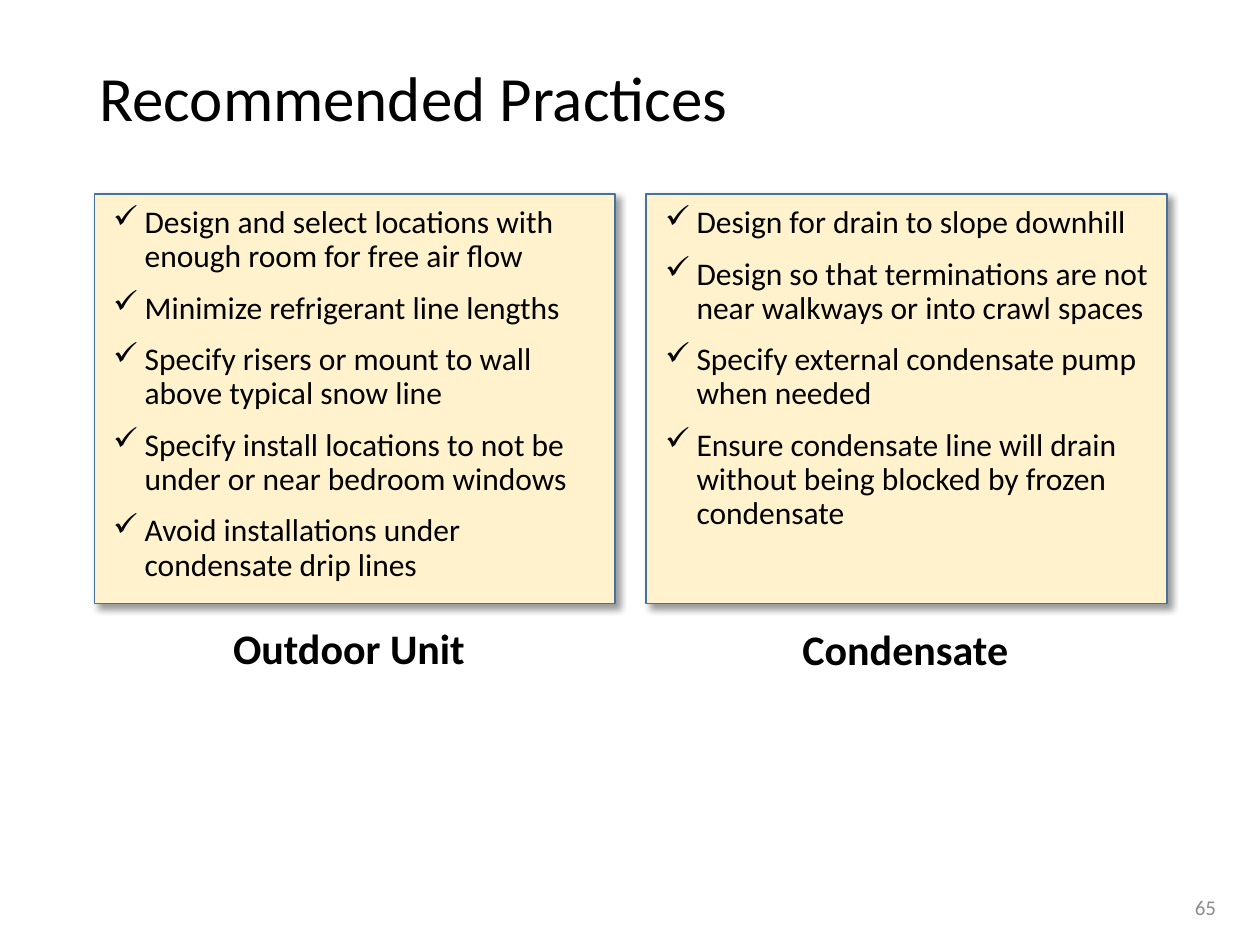
from dataclasses import dataclass

from lxml.etree import SubElement
from pptx import Presentation
from pptx.dml.color import RGBColor as Color
from pptx.enum.shapes import MSO_SHAPE as Shape
from pptx.enum.text import MSO_ANCHOR as Anchor, PP_ALIGN as Align
from pptx.oxml.ns import qn
from pptx.util import Inches, Pt

TITLE = "Recommended Practices"
PAGE_NUMBER = "65"
PANELS = [
    {
        "caption": "Outdoor Unit",
        "caption_at": (1.64, 4.89, 2.26, 0.5),
        "practices": [
            "Design and select locations with enough room for free air flow",
            "Minimize refrigerant line lengths",
            "Specify risers or mount to wall above typical snow line",
            "Specify install locations to not be under or near bedroom windows",
            "Avoid installations under condensate drip lines",
        ],
    },
    {
        "caption": "Condensate",
        "caption_at": (6.14, 4.9, 2.09, 0.5),
        "practices": [
            "Design for drain to slope downhill",
            "Design so that terminations are not near walkways or into crawl spaces",
            "Specify external condensate pump when needed",
            "Ensure condensate line will drain without being blocked by frozen condensate",
        ],
    },
]


@dataclass(frozen=True)
class Theme:
    font: str = "Calibri"
    ink: str = "000000"
    muted: str = "8C8C8C"
    panel: str = "FFF2CC"
    border: str = "43739E"
    title: int = 36
    caption: int = 24
    body: int = 18
    number: int = 12


THEME = Theme()
LEFT, TOP, WIDTH, HEIGHT = 0.75, 1.54, 4.13, 3.25
GAP, INSET, BODY_HEIGHT, INDENT = 0.25, 0.05, 5.16, 0.25


def inches(area):
    return [Inches(length) for length in area]


def add_text(page, area, lines, size, color=THEME.ink, bold=False,
             align=Align.LEFT, anchor=Anchor.TOP, spacing=1.0, checked=False):
    frame = page.shapes.add_textbox(*inches(area)).text_frame
    frame.word_wrap = True
    frame.vertical_anchor = anchor
    frame.text = "\n".join(lines)
    for index, para in enumerate(frame.paragraphs):
        if checked:
            add_check(para)
            para.space_before = Pt(10 if index else 0)
        para.alignment = align
        para.line_spacing = spacing
        for span in para.runs:
            span.font.name = THEME.font
            span.font.size = Pt(size)
            span.font.bold = bold
            span.font.color.rgb = Color.from_string(color)


def add_check(para):
    properties = para._p.get_or_add_pPr()
    properties.set("marL", str(Inches(INDENT)))
    properties.set("indent", str(-Inches(INDENT)))
    SubElement(properties, qn("a:buChar"), char="✓")


def add_panel(page, area):
    box = page.shapes.add_shape(Shape.RECTANGLE, *inches(area))
    box.fill.solid()
    box.fill.fore_color.rgb = Color.from_string(THEME.panel)
    box.line.color.rgb = Color.from_string(THEME.border)
    box.line.width = Pt(1)
    box.shadow.inherit = False
    effects = box._element.spPr.find(qn("a:effectLst"))
    shadow = SubElement(effects, qn("a:outerShdw"), blurRad=str(Pt(4)),
                        dist=str(Pt(3)), dir=str(45 * 60000), algn="tl", rotWithShape="0")
    tint = SubElement(shadow, qn("a:srgbClr"), val=THEME.ink)
    SubElement(tint, qn("a:alpha"), val="40000")


def main():
    deck = Presentation()
    deck.slide_width, deck.slide_height = Inches(10), Inches(7.5)
    page = deck.slides.add_slide(deck.slide_layouts[6])
    add_text(page, (0.69, 0.3, 8.62, 1), [TITLE], THEME.title,
             anchor=Anchor.MIDDLE, spacing=0.9)
    for column, panel in enumerate(PANELS):
        left = LEFT + column * (WIDTH + GAP)
        add_panel(page, (left, TOP, WIDTH, HEIGHT))
        add_text(page, (left + INSET, TOP + INSET, WIDTH, BODY_HEIGHT),
                 panel["practices"], THEME.body, spacing=0.9, checked=True)
        add_text(page, panel["caption_at"], [panel["caption"]], THEME.caption,
                 bold=True, align=Align.CENTER)
    add_text(page, (7.5, 7, 2.25, 0.4), [PAGE_NUMBER], THEME.number,
             color=THEME.muted, align=Align.RIGHT, anchor=Anchor.MIDDLE)
    deck.save("out.pptx")


if __name__ == "__main__":
    main()
